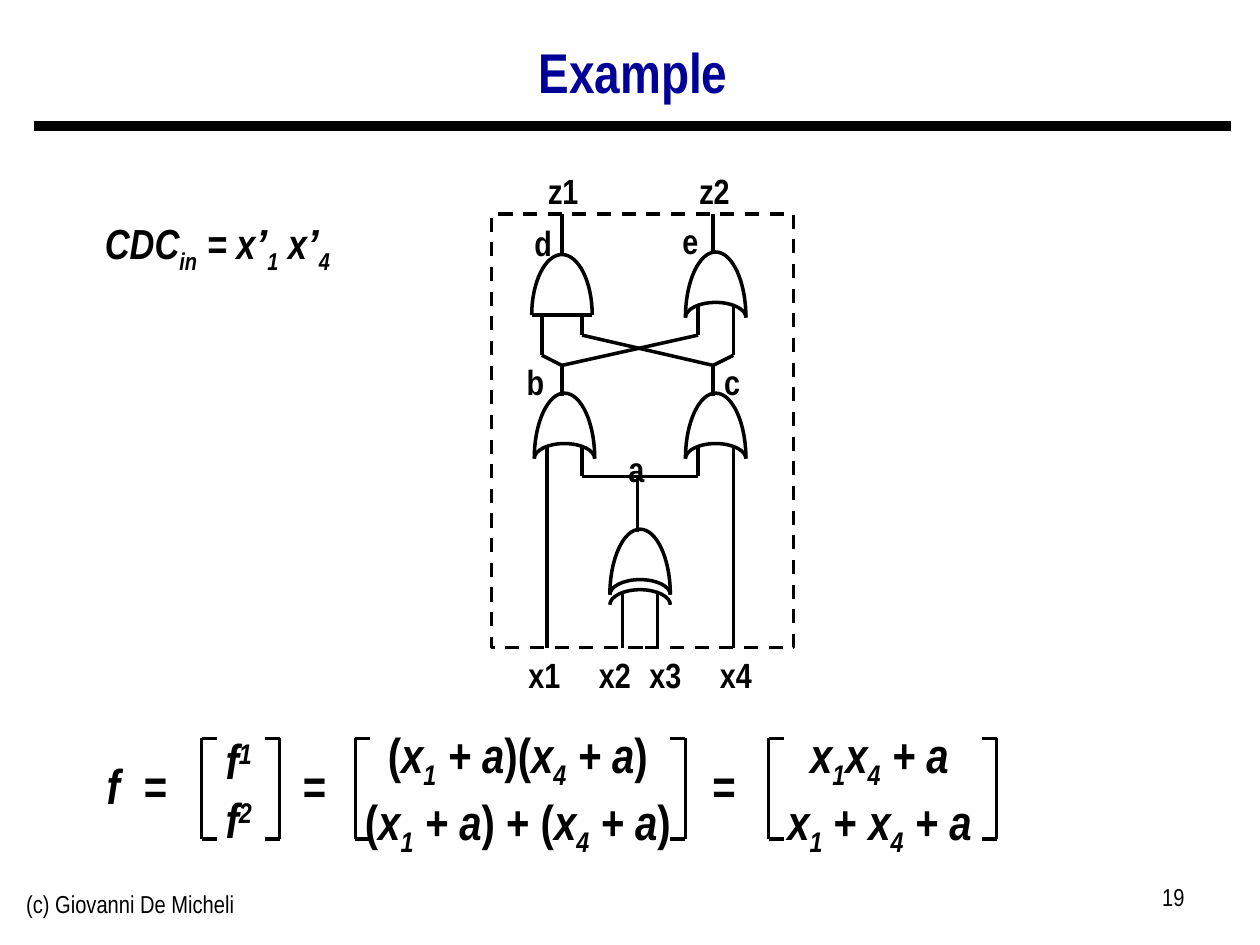
from lxml import etree
from pptx import Presentation
from pptx import util as u
from pptx.dml import color as dml
from pptx.enum import dml as dash, shapes, text
from pptx.oxml import ns

COLORS = {"ink": "000000", "title": "000099"}
INCH = u.Cm(2.54)  # the layout grid is in inches
LEFT, CENTER, RIGHT = text.PP_ALIGN.LEFT, text.PP_ALIGN.CENTER, text.PP_ALIGN.RIGHT

deck = Presentation()
deck.slide_width, deck.slide_height = u.Cm(25.4), u.Cm(19.05)
slide = deck.slides.add_slide(deck.slide_layouts[6])


def wire(x1, y1, x2, y2, width=2):
    """Draw a straight black line between two points."""
    ends = [round(v * INCH) for v in (x1, y1, x2, y2)]
    line = slide.shapes.add_connector(shapes.MSO_CONNECTOR.STRAIGHT, *ends)
    line.line.color.rgb = dml.RGBColor.from_string(COLORS["ink"])
    line.line.width = u.Pt(width)
    etree.SubElement(line._element.spPr, ns.qn("a:effectLst"))


def label(box, rows, size, align=CENTER, bold=True, color="ink", wrap=False):
    """Add text; each row lists (text, style): i italic, _ subscript, ^ superscript."""
    area = slide.shapes.add_textbox(*[round(v * INCH) for v in box])
    frame = area.text_frame
    frame.word_wrap = wrap
    if not wrap:
        frame.auto_size = text.MSO_AUTO_SIZE.SHAPE_TO_FIT_TEXT
    for index, row in enumerate(rows):
        para = frame.add_paragraph() if index else frame.paragraphs[0]
        para.alignment = align
        for words, style in row:
            run = para.add_run()
            run.text = words
            run.font.name = "Arial" if words == "’" else "Arial Narrow"
            run.font.size = u.Pt(size)
            run.font.bold = bold
            run.font.italic = "i" in style
            run.font.color.rgb = dml.RGBColor.from_string(COLORS[color])
            for mark, shift in (("_", "-25000"), ("^", "30000")):
                if mark in style:
                    run._r.get_or_add_rPr().set("baseline", shift)
    return frame


# Header and footer
wire(0.27, 1, 9.77, 1, width=6)
label((0.11, 7.01, 3.17, 0.52), [[("(c) Giovanni De Micheli", "")]], 14,
      LEFT, bold=False, wrap=True)
label((7.17, 6.95, 2.33, 0.52), [[("19", "")]], 14, RIGHT, bold=False, wrap=True)
title = label((0.27, 0.22, 9.51, 0.75), [[("Example", "")]], 32,
              color="title", wrap=True)
title.vertical_anchor = text.MSO_ANCHOR.MIDDLE
title.paragraphs[0].line_spacing = 0.9

# Gate outlines: half ellipses given as centre x, top, height
RADIUS, BEND = 0.24, 0.45
arcs = [(4.46, 2.02, 0.48)]  # AND gate d
for x, top in ((5.68, 2), (4.48, 3.12), (5.68, 3.12), (5.08, 4.2)):  # OR gates
    arcs += [(x, top, 0.52), (x, top + 0.4, 0.12)]
arcs.append((5.08, 4.68, 0.12))  # second input curve of the XOR gate a
for x, top, height in arcs:
    start, apex, end = [(round(px * INCH), round(py * INCH)) for px, py in (
        (x - RADIUS, top + height), (x, top), (x + RADIUS, top + height))]
    builder = slide.shapes.build_freeform(*start)
    builder.add_line_segments([apex, end], close=False)
    curve = builder.convert_to_shape()
    # Bend the two straight segments into quarter ellipses
    r, h = RADIUS * INCH, height * INCH
    bends = (((0, BEND * h), (BEND * r, 0), (r, 0)),
             (((2 - BEND) * r, 0), (2 * r, BEND * h), (2 * r, h)))
    for segment, controls in zip(list(curve._element.iter(ns.qn("a:lnTo"))), bends):
        bezier = etree.Element(ns.qn("a:cubicBezTo"))
        for px, py in controls:
            etree.SubElement(bezier, ns.qn("a:pt"), x=str(round(px)), y=str(round(py)))
        segment.getparent().replace(segment, bezier)
    curve.shadow.inherit = False
    curve.fill.background()
    curve.line.color.rgb = dml.RGBColor.from_string(COLORS["ink"])
    curve.line.width = u.Pt(2)
wire(4.22, 2.5, 4.7, 2.5)

# Circuit boundary
boundary = slide.shapes.add_shape(
    shapes.MSO_SHAPE.RECTANGLE, *[round(v * INCH) for v in (3.9, 1.7, 2.4, 3.44)])
boundary.shadow.inherit = False
boundary.fill.background()
boundary.line.color.rgb = dml.RGBColor.from_string(COLORS["ink"])
boundary.line.width = u.Pt(2)
boundary.line.dash_style = dash.MSO_LINE.DASH

# Vertical wires: x, top, bottom
for x, top, bottom in (
    (4.34, 3.54, 5.14), (5.82, 3.54, 5.14), (4.94, 4.7, 5.14), (5.22, 4.7, 5.14),
    (4.46, 2.9, 3.14), (5.66, 2.9, 3.14), (4.3, 2.5, 2.82), (5.82, 2.42, 2.82),
    (4.62, 2.5, 2.66), (5.54, 2.42, 2.66), (4.62, 3.54, 3.78), (5.54, 3.54, 3.78),
    (5.06, 3.78, 4.22), (4.46, 1.7, 2.02), (5.66, 1.7, 2.02),
):
    wire(x, top, x, bottom)

# Crossing wires and the shared output of gate a
wire(4.3, 2.82, 4.46, 2.9)
wire(5.66, 2.9, 5.82, 2.82)
wire(5.54, 2.66, 4.46, 2.9)
wire(4.62, 2.66, 5.66, 2.9)
wire(4.62, 3.78, 5.54, 3.78)

# Signal names: centre x, top
for name, x, top in (
    ("a", 5.05, 3.5), ("b", 4.25, 2.81), ("c", 5.81, 2.81), ("d", 4.31, 1.71),
    ("e", 5.48, 1.69), ("x1", 4.32, 5.14), ("x2", 4.88, 5.14), ("x3", 5.28, 5.14),
    ("x4", 5.84, 5.14), ("z1", 4.47, 1.3), ("z2", 5.67, 1.3),
):
    width = 0.34 if len(name) == 1 else 0.48
    label((x - width / 2, top, width, 0.43), [[(name, "")]], 20)

# Matrix brackets
BRACKET_TOP, BRACKET_BOTTOM, HOOK = 5.86, 6.66, 0.12
for left, right in ((1.6, 2.22), (2.82, 5.44), (6.1, 7.91)):
    for x, tip in ((left, left + HOOK), (right, right - HOOK)):
        wire(x, BRACKET_TOP, x, BRACKET_BOTTOM)
        for y in (BRACKET_TOP, BRACKET_BOTTOM):
            wire(x, y, tip, y)

# Matrix equation
for sign, x in (("f", 0.9), ("=", 1.23), ("=", 2.49), ("=", 5.74)):
    label((x - 0.2, 5.95, 0.4, 0.57), [[(sign, "i")]], 28)
x1, x4 = [("x", "i"), ("1", "i_")], [("x", "i"), ("4", "i_")]
plus_a = [(" + a", "i")]
label((1.68, 5.75, 0.43, 1.03), [[("f", "i"), (n, "i^")] for n in "12"], 28)
label((2.78, 5.7, 2.66, 1.03),
      [[("(", "")] + x1 + plus_a + [(joint, "")] + x4 + plus_a + [(")", "")]
       for joint in (")(", ") + (")], 28)
label((6.13, 5.7, 1.7, 1.03),
      [x1 + x4 + plus_a, x1 + [(" + ", "")] + x4 + plus_a], 28)

# Don't-care condition
label((0.72, 1.68, 2.01, 0.5),
      [[("CDC", "i"), ("in", "i_"), (" = x", "i"), ("’", "i"), ("1", "i_"),
        (" x", "i"), ("’", "i"), ("4", "i_")]], 24)

deck.save("out.pptx")
